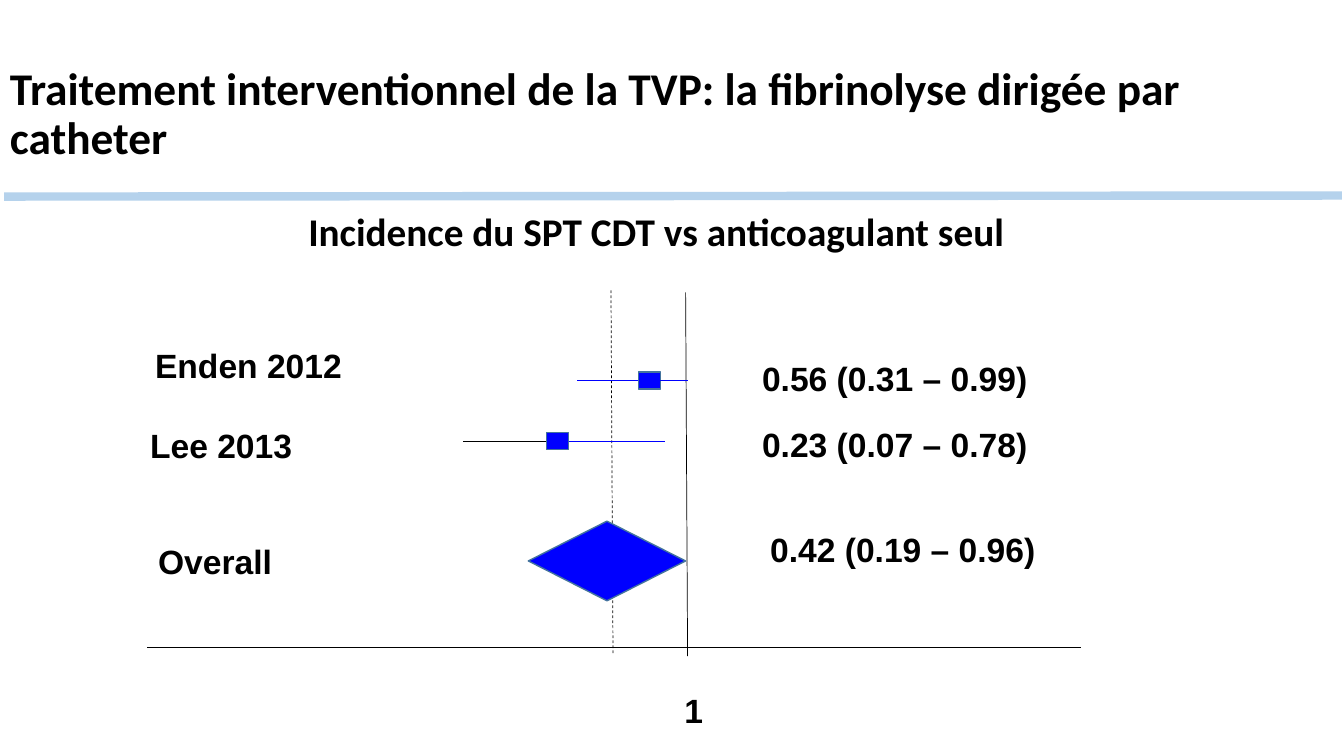
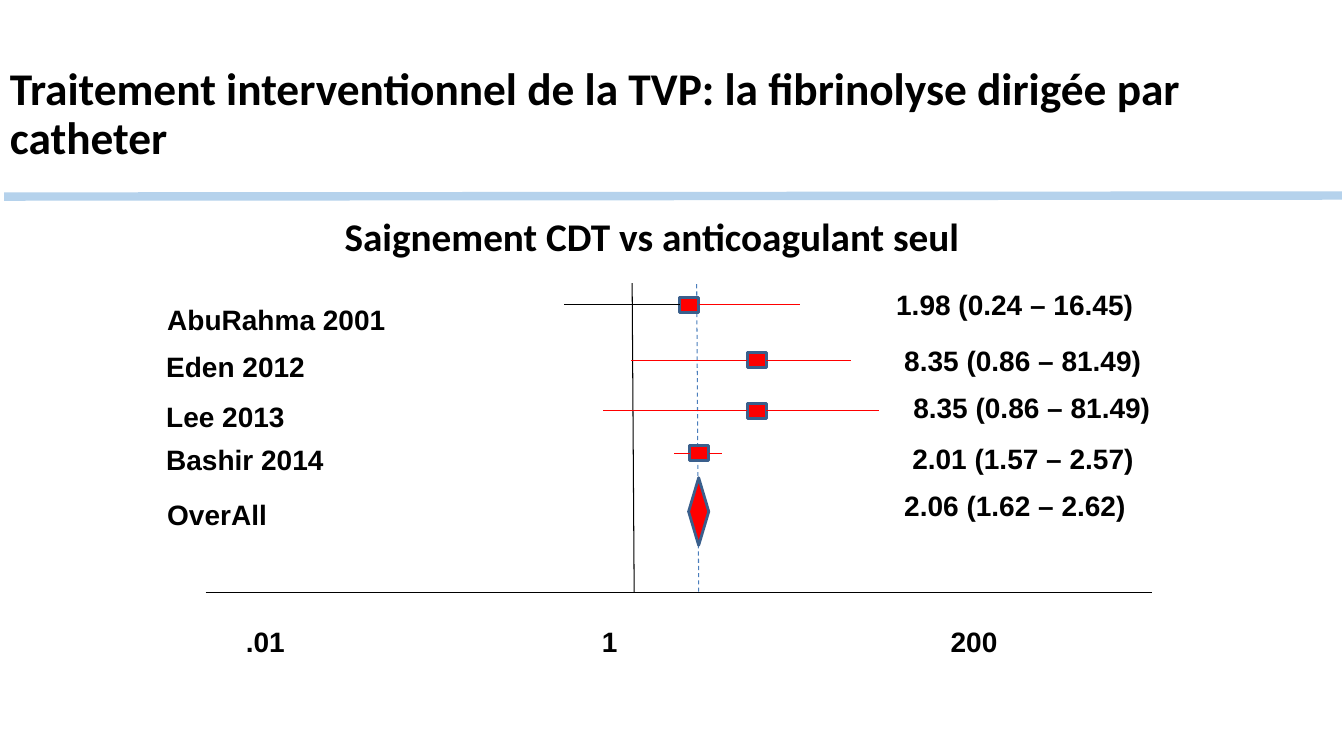
from dataclasses import dataclass

from lxml.etree import SubElement
from pptx import Presentation
from pptx.dml.color import RGBColor
from pptx.enum.dml import MSO_LINE_DASH_STYLE as Dash
from pptx.enum.shapes import MSO_CONNECTOR as Connector
from pptx.enum.shapes import MSO_SHAPE as Shape
from pptx.enum.text import MSO_ANCHOR as Anchor
from pptx.oxml.ns import qn
from pptx.util import Inches, Pt


@dataclass(frozen=True)
class Theme:
    black: str = "000000"
    band: str = "B5D2EC"
    blue: str = "0000FF"
    blue_edge: str = "43739E"
    red: str = "FF0000"
    red_edge: str = "3A5F8C"
    dashed_blue: str = "4B7EBC"
    heading_font: str = "Calibri"
    body_font: str = "Arial"
    title_size: float = 32.4
    subtitle_size: float = 28
    large_size: float = 24
    small_size: float = 20


theme = Theme()


def add_text(slide, text, left, top, width, height, size,
             font=theme.body_font, wrap=True, anchor=Anchor.TOP, spacing=None, tabs=()):
    box = slide.shapes.add_textbox(Inches(left), Inches(top), Inches(width), Inches(height))
    frame = box.text_frame
    frame.word_wrap = wrap
    frame.vertical_anchor = anchor
    paragraph = frame.paragraphs[0]
    if spacing:
        paragraph.line_spacing = spacing
    if tabs:
        tab_list = SubElement(paragraph._p.get_or_add_pPr(), qn("a:tabLst"))
        for position in tabs:
            SubElement(tab_list, qn("a:tab"), pos=str(Inches(position)), algn="l")
    run = paragraph.add_run()
    run.text = text
    run.font.name = font
    run.font.size = Pt(size)
    run.font.bold = True
    run.font.color.rgb = RGBColor.from_string(theme.black)


def add_line(slide, start, end, color, width, dash=None):
    line = slide.shapes.add_connector(Connector.STRAIGHT, *map(Inches, start + end))
    line.line.color.rgb = RGBColor.from_string(color)
    line.line.width = Pt(width)
    if dash:
        line.line.dash_style = dash
    SubElement(line._element.spPr, qn("a:effectLst"))
    return line


title = "Traitement interventionnel de la TVP: la fibrinolyse dirigée par catheter"

forest_plots = [
    {
        "subtitle": ("Incidence du SPT CDT vs anticoagulant seul", 2.96, 2.01, 7.27, 0.57),
        "size": theme.large_size,
        "fill": theme.blue,
        "edge": theme.blue_edge,
        "edge_width": 1,
        "line_width": 0.5,
        "axis": ((1.46, 6.42), (10.72, 6.42)),
        "no_effect": ((6.8, 2.9), (6.82, 6.51)),
        "pooled": ((6.06, 2.88), (6.08, 6.49), theme.black),
        "scale": ("1", 6.69, 6.8, 5.72, 0.33),
        "tabs": (),
        "marker": (0.22, 0.17),
        "studies": [
            (6.33, 3.69, 5.72, 6.82, theme.blue),
            (5.42, 4.29, 4.59, 6.6, theme.black),
        ],
        "diamond": (5.24, 5.17, 1.56, 0.79),
        "labels": [
            ("Enden 2012", 1.44, 3.37),
            ("Lee 2013", 1.39, 4.17),
            ("Overall", 1.47, 5.32),
            ("0.56 (0.31 – 0.99)", 7.46, 3.5),
            ("0.23 (0.07 – 0.78)", 7.46, 4.16),
            ("0.42 (0.19 – 0.96)", 7.54, 5.2),
        ],
    },
    {
        "subtitle": ("Saignement CDT vs anticoagulant seul", 3.32, 2.06, 6.46, 0.57),
        "size": theme.small_size,
        "fill": theme.red,
        "edge": theme.red_edge,
        "edge_width": 2,
        "line_width": 0.75,
        "axis": ((2.04, 5.88), (11.43, 5.88)),
        "no_effect": ((6.27, 2.81), (6.29, 5.88)),
        "pooled": ((6.91, 2.82), (6.93, 5.9), theme.dashed_blue),
        "scale": (".01\t1\t200", 2.34, 6.15, 7.85, 0.29),
        "tabs": (3.53, 6.99),
        "marker": (0.19, 0.15),
        "studies": [
            (6.74, 2.95, 5.59, 7.93, theme.black),
            (7.41, 3.5, 6.26, 8.44, theme.red),
            (7.41, 4, 5.98, 8.72, theme.red),
            (6.84, 4.42, 6.68, 7.16, theme.red),
        ],
        "diamond": (6.83, 4.74, 0.2, 0.67),
        "labels": [
            ("AbuRahma 2001", 1.56, 2.95),
            ("Eden 2012", 1.55, 3.42),
            ("Lee 2013", 1.55, 3.91),
            ("Bashir 2014", 1.55, 4.34),
            ("OverAll", 1.56, 4.89),
            ("1.98 (0.24 – 16.45)", 8.79, 2.8),
            ("8.35 (0.86 – 81.49)", 8.87, 3.36),
            ("8.35 (0.86 – 81.49)", 8.96, 3.83),
            ("2.01 (1.57 – 2.57)", 8.95, 4.33),
            ("2.06 (1.62 – 2.62)", 8.87, 4.8),
        ],
    },
]

presentation = Presentation()
presentation.slide_width = Inches(13.33)
presentation.slide_height = Inches(7.5)

for plot in forest_plots:
    slide = presentation.slides.add_slide(presentation.slide_layouts[6])
    add_line(slide, (0.04, 1.95), (13.31, 1.94), theme.band, 6)
    add_text(slide, title, 0, 0.62, 13.33, 1.05, theme.title_size,
             font=theme.heading_font, anchor=Anchor.MIDDLE, spacing=0.9)
    add_text(slide, *plot["subtitle"], theme.subtitle_size,
             font=theme.heading_font, wrap=False)

    line_width = plot["line_width"]
    add_line(slide, *plot["axis"], theme.black, line_width)
    add_line(slide, *plot["no_effect"], theme.black, line_width)
    add_line(slide, *plot["pooled"], line_width, Dash.DASH)
    add_text(slide, *plot["scale"], plot["size"], tabs=plot["tabs"])
    for label, left, top in plot["labels"]:
        add_text(slide, label, left, top, 3.5, 0.5, plot["size"])

    marker_width, marker_height = plot["marker"]
    markers = [(Shape.RECTANGLE, left, top, marker_width, marker_height)
               for left, top, *interval in plot["studies"]]
    markers.append((Shape.DIAMOND, *plot["diamond"]))
    shapes = []
    for kind, *bounds in markers:
        shape = slide.shapes.add_shape(kind, *map(Inches, bounds))
        shape.shadow.inherit = False
        shape.fill.solid()
        shape.fill.fore_color.rgb = RGBColor.from_string(plot["fill"])
        shape.line.color.rgb = RGBColor.from_string(plot["edge"])
        shape.line.width = Pt(plot["edge_width"])
        shapes.append(shape)

    for shape, (left, top, low, high, low_color) in zip(shapes, plot["studies"]):
        middle = top + marker_height / 2
        lower = add_line(slide, (left, middle), (low, middle), low_color, line_width)
        lower.begin_connect(shape, 1)
        upper = add_line(slide, (left + marker_width, middle), (high, middle),
                         plot["fill"], line_width)
        upper.begin_connect(shape, 3)

presentation.save("out.pptx")
